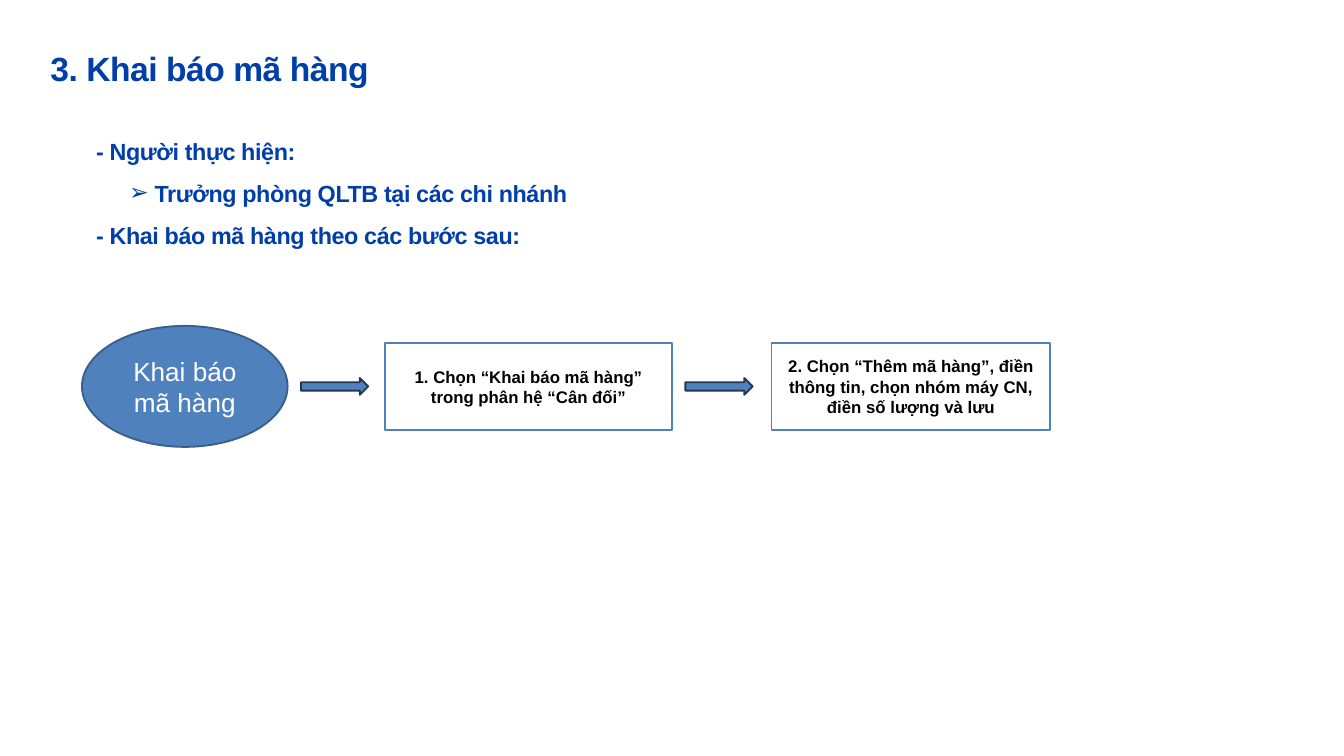
from dataclasses import dataclass
from typing import Any

from lxml.etree import SubElement
from pptx import Presentation
from pptx.dml.color import RGBColor
from pptx.enum.shapes import MSO_SHAPE
from pptx.enum.text import MSO_ANCHOR, MSO_AUTO_SIZE, PP_ALIGN
from pptx.oxml.ns import qn
from pptx.util import Inches, Pt

COLORS = {
    "heading": "003EA8",
    "blue": "4F81BD",
    "oval_edge": "3A5F8C",
    "arrow_edge": "233953",
    "white": "FFFFFF",
    "black": "000000",
}


def write(para, text, size, color, bold=False, spacing=0, align=PP_ALIGN.LEFT, leading=None):
    """Add formatted text to a paragraph."""
    para.alignment = align
    if leading is not None:
        para.line_spacing = leading
    span = para.add_run()
    span.text = text
    span.font.name = "Arial"
    span.font.size = Pt(size)
    span.font.bold = bold
    span.font.color.rgb = RGBColor.from_string(COLORS[color])
    if spacing:
        span.font._element.set("spc", str(round(spacing * 100)))


@dataclass
class SlideBuilder:
    """Draws elements on one page, measured in columns and rows of a one-inch grid."""

    page: Any
    unit: int = Inches(1)
    middle: float = 5.75
    gap: float = 0.2

    def place(self, left, top, width, height):
        return [round(value * self.unit) for value in (left, top, width, height)]

    def frame(self, box):
        frame = box.text_frame
        frame.margin_left = frame.margin_right = frame.margin_top = frame.margin_bottom = 0
        frame.word_wrap = True
        frame.vertical_anchor = MSO_ANCHOR.TOP
        frame.auto_size = MSO_AUTO_SIZE.SHAPE_TO_FIT_TEXT
        return frame

    def title(self, text, left, top, width, height):
        box = self.page.shapes.title
        box.left, box.top, box.width, box.height = self.place(left, top, width, height)
        write(self.frame(box).paragraphs[0], text, 36, "heading",
              bold=True, spacing=-0.5, leading=Pt(43.5))

    def outline(self, lines, left, top, width, height):
        frame = self.frame(self.page.shapes.add_textbox(*self.place(left, top, width, height)))
        for index, (text, level) in enumerate(lines):
            para = frame.paragraphs[0] if index == 0 else frame.add_paragraph()
            write(para, text, 25, "heading", bold=True, spacing=-0.4, leading=1.5)
            if level:
                self.bullet(para, level)

    def bullet(self, para, level):
        para.level = level
        settings = para._p.get_or_add_pPr()
        settings.set("marL", str(Inches(0.87)))
        settings.set("indent", str(Inches(-0.38)))
        SubElement(settings, qn("a:buFont")).set("typeface", "Arial")
        SubElement(settings, qn("a:buChar")).set("char", "➢")

    def shape(self, kind, left, width, height, fill, edge):
        top = self.middle - height / 2
        box = self.page.shapes.add_shape(kind, *self.place(left, top, width, height))
        box.shadow.inherit = False
        box.fill.solid()
        box.fill.fore_color.rgb = RGBColor.from_string(COLORS[fill])
        box.line.color.rgb = RGBColor.from_string(COLORS[edge])
        box.line.width = Pt(2)
        return box

    def step(self, kind, text, left, width, height, fill, edge, **style):
        box = self.shape(kind, left, width, height, fill, edge)
        box.text_frame.word_wrap = True
        box.text_frame.vertical_anchor = MSO_ANCHOR.MIDDLE
        write(box.text_frame.paragraphs[0], text, align=PP_ALIGN.CENTER, **style)

    def arrow(self, after):
        self.shape(MSO_SHAPE.RIGHT_ARROW, after + self.gap, 1, 0.25, "blue", "arrow_edge")


def main():
    """Build the slide and save it."""
    deck = Presentation()
    deck.slide_width, deck.slide_height = Inches(20), Inches(11.25)
    slide = SlideBuilder(deck.slides.add_slide(deck.slide_layouts[5]))

    slide.title("3. Khai báo mã hàng", 0.75, 0.71, 8.17, 0.58)
    slide.outline([
        ("- Người thực hiện:", 0),
        ("Trưởng phòng QLTB tại các chi nhánh", 1),
        ("- Khai báo mã hàng theo các bước sau:", 0),
    ], 1.43, 1.83, 7.49, 2.45)

    slide.step(MSO_SHAPE.OVAL, "Khai báo mã hàng", 1.22, 3.06, 1.8,
               "blue", "oval_edge", size=28, color="white")
    steps = [
        ("1. Chọn “Khai báo mã hàng” trong phân hệ “Cân đối”", 5.73, 4.27),
        ("2. Chọn “Thêm mã hàng”, điền thông tin, chọn nhóm máy CN, "
         "điền số lượng và lưu", 11.48, 4.15),
    ]
    previous_end = 1.22 + 3.06
    for text, left, width in steps:
        slide.arrow(previous_end)
        slide.step(MSO_SHAPE.RECTANGLE, text, left, width, 1.29,
                   "white", "blue", size=18, color="black", bold=True)
        previous_end = left + width

    deck.save("out.pptx")


if __name__ == "__main__":
    main()
